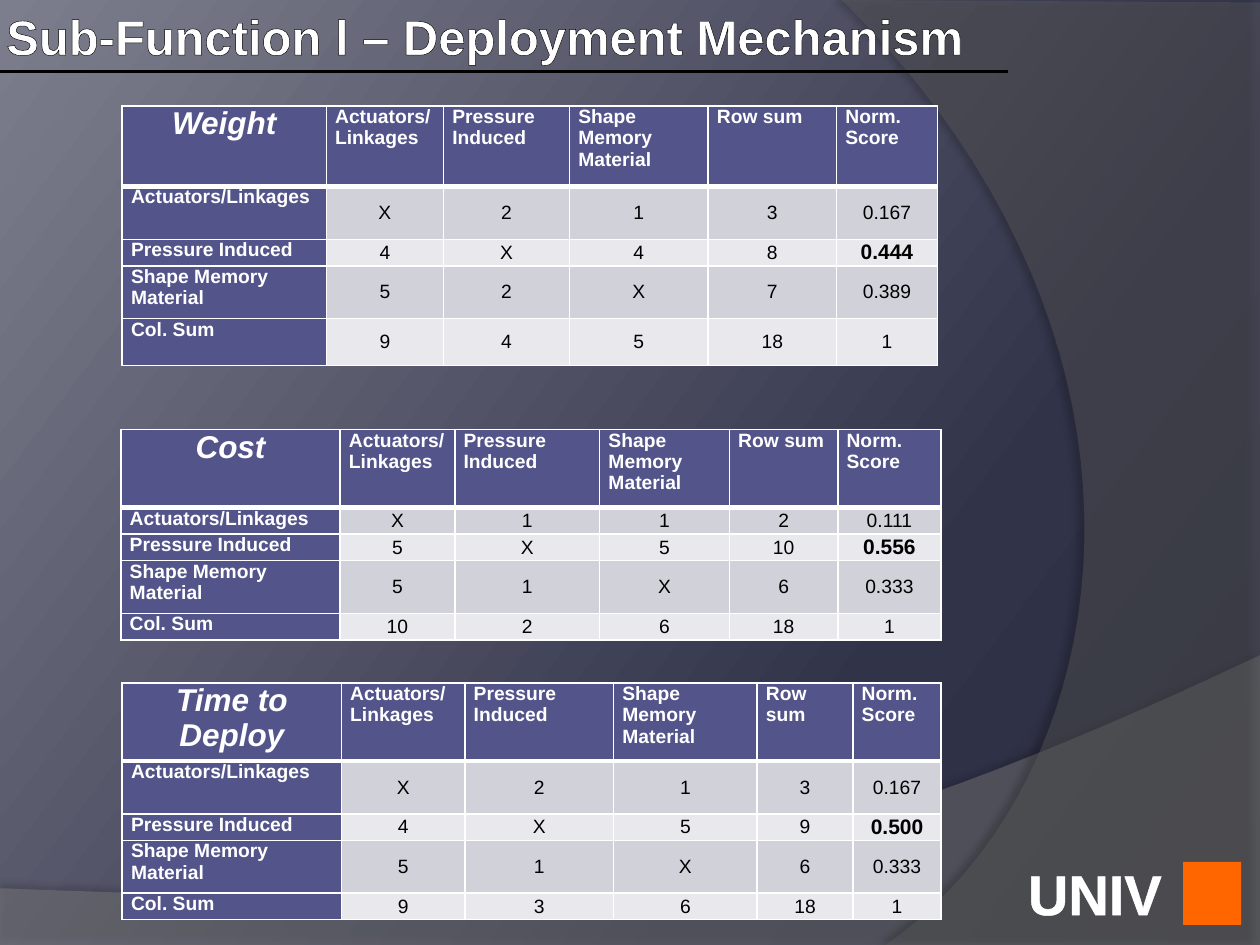
from lxml.etree import SubElement as Sub
from pptx import Presentation
from pptx.dml.color import RGBColor
from pptx.enum.shapes import MSO_CONNECTOR as Link, MSO_SHAPE as Kind
from pptx.enum.text import MSO_ANCHOR as Anchor, MSO_AUTO_SIZE as Auto, PP_ALIGN as Align
from pptx.oxml.ns import qn
from pptx.util import Inches, Pt

COLS, ROWS = 1000, 750
WIDE, HIGH = Inches(10), Inches(7.5)
WHITE, BLACK, PLUM = "FFFFFF", "000000", "53548A"
BANDS = ("D1D1DA", "E9E9ED")
PARTS = ["Actuators/Linkages", "Pressure Induced", "Shape Memory Material"]
HEADS = PARTS + ["Row sum", "Norm. Score"]
SIDES = PARTS + ["Col. Sum"]

TABLES = [
    ("Weight", (97, 84), (162, 93, 100, 110, 102, 80), (64, 42, 21, 42, 37),
     ["X 2 1 3 0.167", "4 X 4 8 0.444", "5 2 X 7 0.389", "9 4 5 18 1"]),
    ("Cost", (96, 341), (174, 91, 115, 103, 86, 82), (62, 21, 21, 42, 21),
     ["X 1 1 2 0.111", "5 X 5 10 0.556", "5 1 X 6 0.333", "10 2 6 18 1"]),
    ("Time to Deploy", (97, 542), (174, 98, 118, 114, 76, 70), (62, 42, 21, 42, 21),
     ["X 2 1 3 0.167", "4 X 5 9 0.500", "5 1 X 6 0.333", "9 3 6 18 1"]),
]


def across(n):
    """Return the length of n grid columns."""
    return round(WIDE * n / COLS)


def down(n):
    """Return the length of n grid rows."""
    return round(HIGH * n / ROWS)


def place(x, y, w, h):
    """Return a grid box as slide lengths."""
    return across(x), down(y), across(w), down(h)


def hue(code):
    """Return the colour for a hex string."""
    return RGBColor.from_string(code)


def node(up, tag, **attrs):
    """Add a drawing element and return it."""
    return Sub(up, qn("a:" + tag), {k: str(v) for k, v in attrs.items()})


def tint(up, code, alpha=100):
    """Add a colour with an opacity in percent."""
    clr = node(up, "srgbClr", val=code)
    if alpha < 100:
        node(clr, "alpha", val=alpha * 1000)


def stroke(up, tag, code, width):
    """Add a solid line element and return it."""
    line = node(up, tag, w=int(Pt(width)))
    tint(node(line, "solidFill"), code)
    return line


def write(frame, words, size=11, color=WHITE, bold=True, italic=False,
          align=Align.LEFT, edge=None):
    """Write one formatted run into a text frame."""
    para = frame.paragraphs[0]
    para.alignment = align
    run = para.add_run()
    run.text = words
    font = run.font
    font.name, font.size = "Arial", Pt(size)
    font.bold, font.italic = bold, italic
    font.color.rgb = hue(color)
    if edge:
        props = font._element
        props.insert(0, stroke(props, "ln", *edge))


def curve(a, b, c, d, steps=40):
    """Return points along a cubic curve after its start."""
    spots = []
    for i in range(1, steps + 1):
        t = i / steps
        s = 1 - t
        spots.append(tuple(s**3 * p + 3 * s * s * t * q + 3 * s * t * t * r + t**3 * u
                           for p, q, r, u in zip(a, b, c, d)))
    return spots


def wave(slide, spots, code, alpha, shade):
    """Draw a see-through backdrop outline with a shadow."""
    grid = [(across(x), down(y)) for x, y in spots]
    build = slide.shapes.build_freeform(*grid[0])
    build.add_line_segments(grid[1:], close=True)
    shape = build.convert_to_shape()
    shape.line.fill.background()
    shape.fill.solid()
    shape.fill.fore_color.rgb = hue(code)
    props = shape._element.spPr
    clr = props.find(qn("a:solidFill"))[0]
    node(clr, "alpha", val=alpha * 1000)
    dark, blur, dist, turn = shade
    drop = node(node(props, "effectLst"), "outerShdw", blurRad=int(Pt(blur)),
                dist=int(Pt(dist)), dir=turn * 60000, algn="ctr", rotWithShape=0)
    tint(drop, BLACK, dark)


def scene(slide):
    """Paint the gradient and the two backdrop waves."""
    slide.background.fill.gradient()
    grad = slide.element.find(".//" + qn("a:gradFill"))
    stops = grad.find(qn("a:gsLst"))
    for stop in list(stops):
        stops.remove(stop)
    for spot, code in ((0, "292B3D"), (30, "313349"), (100, "7D7E8D")):
        tint(node(stops, "gs", pos=spot * 1000), code)
    grad.find(qn("a:lin")).set("ang", str(217 * 60000))
    hill = curve((1000, 520), (559, 729), (391, 719), (0, 705))
    wave(slide, [(0, 751), (1000, 751), (1000, 520)] + hill, "7F7F7F", 45, (35, 4, 3.5, 270))
    bow = curve((703, 750), (891, 619), (947, 275), (668, 0))
    wave(slide, [(1000, 2), (1000, 750), (703, 750)] + bow, "5E5E5E", 40, (45, 4, 4, 180))


def label(slide, box, words, pad=None, wrap=True, **style):
    """Place a text box and return its frame."""
    frame = slide.shapes.add_textbox(*place(*box)).text_frame
    frame.word_wrap = wrap
    if pad is not None:
        frame.margin_left = frame.margin_right = across(pad)
        frame.margin_top = frame.margin_bottom = down(pad)
    write(frame, words, **style)
    return frame


def header(slide, box):
    """Place the title and the rule below it."""
    x, y, w, h = box
    label(slide, box, "Sub-Function l – Deployment Mechanism", pad=5, size=28,
          edge=(BLACK, 1))
    left, top, wide, _ = place(x, y + h + 2, 800, 0)
    rule = slide.shapes.add_connector(Link.STRAIGHT, left, top, left + wide, top)
    rule.line.color.rgb = hue(BLACK)
    rule.line.width = Pt(1.5)
    node(rule._element.spPr, "effectLst")


def paint(cell, code, top=1, base=1):
    """Set the borders, fill and margins of a cell."""
    props = cell._tc.get_or_add_tcPr()
    for tag, width in (("lnL", 1), ("lnR", 1), ("lnT", top), ("lnB", base)):
        stroke(props, tag, WHITE, width)
    cell.fill.solid()
    cell.fill.fore_color.rgb = hue(code)
    cell.margin_left = cell.margin_right = across(7)
    cell.margin_top = cell.margin_bottom = 0


def matrix(slide, name, spot, cols, rows, lines):
    """Place one comparison table."""
    box = place(*spot, sum(cols), sum(rows))
    table = slide.shapes.add_table(len(rows), len(cols), *box).table
    for col, n in zip(table.columns, cols):
        col.width = across(n)
    for row, n in zip(table.rows, rows):
        row.height = down(n)
    cells = [[name] + HEADS] + [[s] + v.split() for s, v in zip(SIDES, lines)]
    for r, row in enumerate(cells):
        for c, words in enumerate(row):
            cell = table.cell(r, c)
            side = r == 0 or c == 0
            paint(cell, PLUM if side else BANDS[(r - 1) % 2],
                  top=3 if r == 1 else 1, base=3 if r == 0 else 1)
            if r == c == 0:
                style = dict(size=18, italic=True, align=Align.CENTER)
            elif side:
                style = {}
            else:
                best = (r, c) == (2, 5)
                style = dict(size=12 if best else 11, bold=best, color=BLACK,
                             align=Align.CENTER)
                cell.vertical_anchor = Anchor.MIDDLE
            write(cell.text_frame, words, **style)


def badge(slide, box):
    """Place the school name and a plain mark beside it."""
    x, y, w, h = box
    frame = label(slide, (x, y, 139, h), "UNIV", wrap=False, size=32, edge=(WHITE, 1.4))
    frame.auto_size = Auto.SHAPE_TO_FIT_TEXT
    mark = slide.shapes.add_shape(Kind.RECTANGLE, *place(x + w - 46, y + 7, 46, 50))
    mark.shadow.inherit = False
    mark.fill.solid()
    mark.fill.fore_color.rgb = hue("FF6600")
    mark.line.fill.background()


def main():
    """Build the slide and save it."""
    deck = Presentation()
    deck.slide_width, deck.slide_height = WIDE, HIGH
    slide = deck.slides.add_slide(deck.slide_layouts[6])
    scene(slide)
    header(slide, (0, 0, 990, 55))
    for item in TABLES:
        matrix(slide, *item)
    badge(slide, (806, 677, 179, 64))
    deck.save("out.pptx")


if __name__ == "__main__":
    main()
